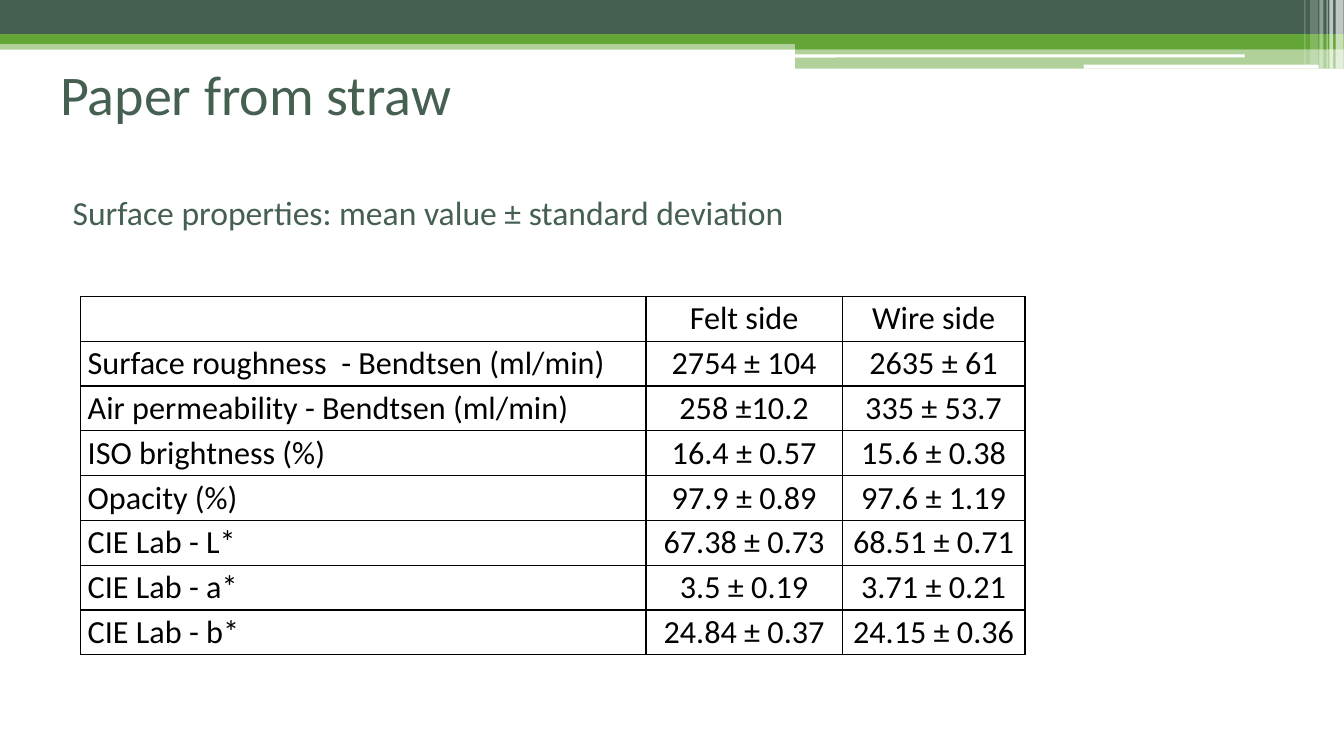
from lxml.etree import SubElement
from pptx import Presentation
from pptx.dml.color import RGBColor
from pptx.enum.shapes import MSO_SHAPE as SHAPE
from pptx.enum.text import MSO_ANCHOR as ANCHOR, PP_ALIGN as ALIGN
from pptx.oxml.ns import qn
from pptx.util import Cm, Pt

WIDTH, HEIGHT = 33.87, 19.05
FONT = "Calibri"
DARK, GREEN, WHITE, BLACK = "455F51", "63A537", "FFFFFF", "000000"

TITLE = "Paper from straw"
SUBTITLE = "Surface properties: mean value ± standard deviation"
ROWS = [
    ("", "Felt side", "Wire side"),
    ("Surface roughness  - Bendtsen (ml/min)", "2754 ± 104", "2635 ± 61"),
    ("Air permeability - Bendtsen (ml/min)", "258 ±10.2", "335 ± 53.7"),
    ("ISO brightness (%)", "16.4 ± 0.57", "15.6 ± 0.38"),
    ("Opacity (%)", "97.9 ± 0.89", "97.6 ± 1.19"),
    ("CIE Lab - L*", "67.38 ± 0.73", "68.51 ± 0.71"),
    ("CIE Lab - a*", "3.5 ± 0.19", "3.71 ± 0.21"),
    ("CIE Lab - b*", "24.84 ± 0.37", "24.15 ± 0.36"),
]
COLUMNS = [14.25, 4.95, 4.6]
ROW_HEIGHT = 1.13

BANDS = [
    (0, 1.02, WIDTH, 0.23, GREEN, 50),
    (0, 0, WIDTH, 0.86, DARK, 100),
    (0, 0.86, WIDTH, 0.25, GREEN, 100),
    (20.04, 0.99, 13.83, 0.25, GREEN, 100),
    (20.04, 1.22, 13.83, 0.51, GREEN, 50),
]
STRIPS = [(20.02, 1.37, 11.35, 0.08), (27.31, 1.63, 5.92, 0.1)]
TICKS = [
    (33.66, 0.2, 1.73, 65),
    (33.5, 0.1, 1.73, 65),
    (33.43, 0.03, 1.73, 60),
    (33.25, 0.1, 1.73, 40),
    (33.02, 0.2, 1.63, 20),
    (32.87, 0.03, 1.63, 30),
]


def rgb(color):
    return RGBColor.from_string(color)


def add_bar(s, x, y, w, h, color, opacity=100, kind=SHAPE.RECTANGLE):
    sp = s.shapes.add_shape(kind, Cm(x), Cm(y), Cm(w), Cm(h))
    sp.shadow.inherit = False
    sp.line.fill.background()
    sp.fill.solid()
    sp.fill.fore_color.rgb = rgb(color)
    if opacity < 100:
        clr = sp.fill._xPr.find(qn("a:solidFill"))[0]
        SubElement(clr, qn("a:alpha"), val=str(opacity * 1000))


def set_text(tf, text, size, color, align=ALIGN.LEFT):
    tf.text = text
    p = tf.paragraphs[0]
    p.alignment = align
    for r in p.runs:
        r.font.name = FONT
        r.font.size = Pt(size)
        r.font.color.rgb = rgb(color)


def add_text(s, x, y, w, h, text, size, anchor):
    tf = s.shapes.add_textbox(Cm(x), Cm(y), Cm(w), Cm(h)).text_frame
    tf.word_wrap = True
    tf.vertical_anchor = anchor
    set_text(tf, text, size, DARK)
    return tf


def set_borders(cell):
    tc_pr = cell._tc.get_or_add_tcPr()
    for i, side in enumerate(("lnL", "lnR", "lnT", "lnB")):
        ln = SubElement(tc_pr, qn("a:" + side), w=str(Pt(1)))
        fill = SubElement(ln, qn("a:solidFill"))
        SubElement(fill, qn("a:srgbClr"), val=BLACK)
        tc_pr.insert(i, ln)


def add_grid(s):
    table = s.shapes.add_table(
        len(ROWS), len(COLUMNS), Cm(2.03), Cm(7.47),
        Cm(sum(COLUMNS)), Cm(ROW_HEIGHT * len(ROWS))).table
    table.first_row = table.horz_banding = False
    for column, width in zip(table.columns, COLUMNS):
        column.width = Cm(width)
    for i, row in enumerate(ROWS):
        table.rows[i].height = Cm(ROW_HEIGHT)
        for j, text in enumerate(row):
            cell = table.cell(i, j)
            cell.vertical_anchor = ANCHOR.MIDDLE
            cell.margin_left = cell.margin_right = Cm(0.18)
            cell.margin_top = cell.margin_bottom = 0
            cell.fill.background()
            set_borders(cell)
            align = ALIGN.CENTER if j else ALIGN.JUSTIFY
            set_text(cell.text_frame, text, 23, BLACK, align)


def main():
    prs = Presentation()
    prs.slide_width, prs.slide_height = Cm(WIDTH), Cm(HEIGHT)
    s = prs.slides.add_slide(prs.slide_layouts[6])
    for band in BANDS:
        add_bar(s, *band)
    for strip in STRIPS:
        add_bar(s, *strip, WHITE, kind=SHAPE.ROUNDED_RECTANGLE)
    for x, w, h, opacity in TICKS:
        add_bar(s, x, 0, w, h, WHITE, opacity)
    add_text(s, 1.27, 0.76, 22.86, 3.18, TITLE, 40, ANCHOR.MIDDLE)
    tf = add_text(s, 1.27, 4.72, 24.13, 12.29, SUBTITLE, 24, ANCHOR.TOP)
    tf.margin_left = Cm(0.56)
    tf.paragraphs[0].space_before = Pt(3)
    add_grid(s)
    prs.save("out.pptx")


if __name__ == "__main__":
    main()
